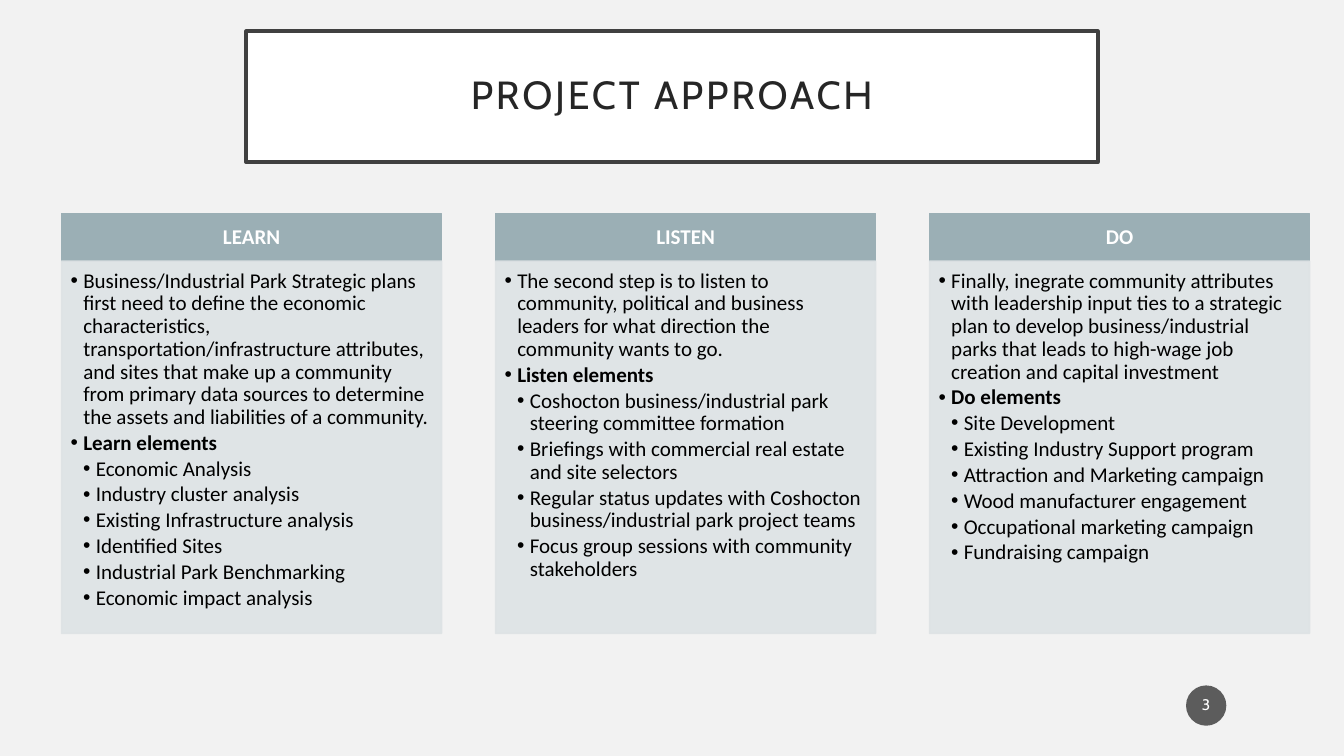
from lxml.etree import SubElement
from pptx import Presentation
from pptx.dml.color import RGBColor
from pptx.enum.shapes import MSO_SHAPE
from pptx.enum.text import MSO_ANCHOR, PP_ALIGN
from pptx.oxml.ns import qn
from pptx.util import Pt

COLORS = {
    "background": "F2F2F2", "white": "FFFFFF", "frame": "404040", "title": "262626",
    "badge": "1D1D1D", "header": "9BAFB5", "panel": "DEE3E5", "body": "000000",
}
TITLE = "PROJECT APPROACH"
PAGE_NUMBER = "3"
STEPS = [
    ("LEARN",
     "Business/Industrial Park Strategic plans first need to define the economic "
     "characteristics, transportation/infrastructure attributes, and sites that make up "
     "a community from primary data sources to determine the assets and liabilities of "
     "a community.",
     "Learn elements",
     ["Economic Analysis", "Industry cluster analysis", "Existing Infrastructure analysis",
      "Identified Sites", "Industrial Park Benchmarking", "Economic impact analysis"]),
    ("LISTEN",
     "The second step is to listen to community, political and business leaders for what "
     "direction the community wants to go.",
     "Listen elements",
     ["Coshocton business/industrial park steering committee formation",
      "Briefings with commercial real estate and site selectors",
      "Regular status updates with Coshocton business/industrial park project teams",
      "Focus group sessions with community stakeholders"]),
    ("DO",
     "Finally, inegrate community attributes with leadership input ties to a strategic "
     "plan to develop business/industrial parks that leads to high-wage job creation and "
     "capital investment",
     "Do elements",
     ["Site Development", "Existing Industry Support program",
      "Attraction and Marketing campaign", "Wood manufacturer engagement",
      "Occupational marketing campaign", "Fundraising campaign"]),
]
COLUMN_LEFT, COLUMN_PITCH, COLUMN_WIDTH = 44, 310, 271.5
HEADER_TOP, HEADER_HEIGHT, PANEL_HEIGHT = 152.5, 34, 266
BULLET_INDENT = 9


def color(name):
    return RGBColor.from_string(COLORS[name])


def set_alpha(fill, percent):
    solid = fill._xPr.find(qn("a:solidFill"))
    SubElement(solid[0], qn("a:alpha")).set("val", str(percent * 1000))


def add_box(slide, kind, bounds, fill, margins, line=None, line_width=1, alpha=None,
            anchor=MSO_ANCHOR.MIDDLE):
    shape = slide.shapes.add_shape(kind, *map(Pt, bounds))
    shape.shadow.inherit = False
    shape.fill.solid()
    shape.fill.fore_color.rgb = color(fill)
    if line:
        shape.line.color.rgb = color(line)
        shape.line.width = Pt(line_width)
    else:
        shape.line.fill.background()
    if alpha:
        set_alpha(shape.fill, alpha)
        if line:
            set_alpha(shape.line.fill, alpha)
    frame = shape.text_frame
    frame.word_wrap = True
    frame.vertical_anchor = anchor
    (frame.margin_left, frame.margin_top,
     frame.margin_right, frame.margin_bottom) = map(Pt, margins)
    return frame


def write(paragraph, text, size, font_name, ink, bold=False, align=PP_ALIGN.CENTER):
    paragraph.text = text
    paragraph.alignment = align
    paragraph.line_spacing = 0.9
    paragraph.font.size = Pt(size)
    paragraph.font.name = font_name
    paragraph.font.bold = bold
    paragraph.font.color.rgb = color(ink)


def add_bullet(paragraph, level):
    paragraph.level = level
    properties = paragraph._p.get_or_add_pPr()
    properties.set("marL", str(Pt(BULLET_INDENT * (level + 1))))
    properties.set("indent", str(-Pt(BULLET_INDENT)))
    SubElement(properties, qn("a:buFont")).set("typeface", "Arial")
    SubElement(properties, qn("a:buChar")).set("char", "•")


def add_step(slide, left, heading, summary, subheading, elements):
    header = add_box(slide, MSO_SHAPE.RECTANGLE,
                     (left, HEADER_TOP, COLUMN_WIDTH, HEADER_HEIGHT),
                     "header", (8.5, 5, 8.5, 5), "header")
    write(header.paragraphs[0], heading, 15, "Calibri", "white", True)

    panel = add_box(slide, MSO_SHAPE.RECTANGLE,
                    (left, HEADER_TOP + HEADER_HEIGHT, COLUMN_WIDTH, PANEL_HEIGHT),
                    "panel", (6.5, 6.5, 8.5, 9.5), "panel", alpha=90,
                    anchor=MSO_ANCHOR.TOP)
    lines = [(summary, 0, False), (subheading, 0, True)]
    lines += [(element, 1, False) for element in elements]
    for index, (text, level, bold) in enumerate(lines):
        paragraph = panel.add_paragraph() if index else panel.paragraphs[0]
        add_bullet(paragraph, level)
        write(paragraph, text, 15, "Calibri", "body", bold, PP_ALIGN.LEFT)
        paragraph.space_after = Pt(2.25)


def main():
    presentation = Presentation()
    presentation.slide_width, presentation.slide_height = Pt(960), Pt(540)
    slide = presentation.slides.add_slide(presentation.slide_layouts[6])
    slide.background.fill.solid()
    slide.background.fill.fore_color.rgb = color("background")

    title = add_box(slide, MSO_SHAPE.RECTANGLE, (175.8, 22.3, 608.4, 93.6), "white",
                    (14.4, 14.4, 14.4, 14.4), "frame", 2.5)
    write(title.paragraphs[0], TITLE, 28, "Cabin", "title")
    title.paragraphs[0].runs[0]._r.get_or_add_rPr().set("spc", "200")

    badge = add_box(slide, MSO_SHAPE.OVAL, (847.2, 489.6, 28.8, 28.8), "badge",
                    (1.4, 3.6, 1.4, 3.6), alpha=70)
    write(badge.paragraphs[0], PAGE_NUMBER, 11, "Cabin", "white")

    for index, step in enumerate(STEPS):
        add_step(slide, COLUMN_LEFT + index * COLUMN_PITCH, *step)
    presentation.save("out.pptx")


if __name__ == "__main__":
    main()
